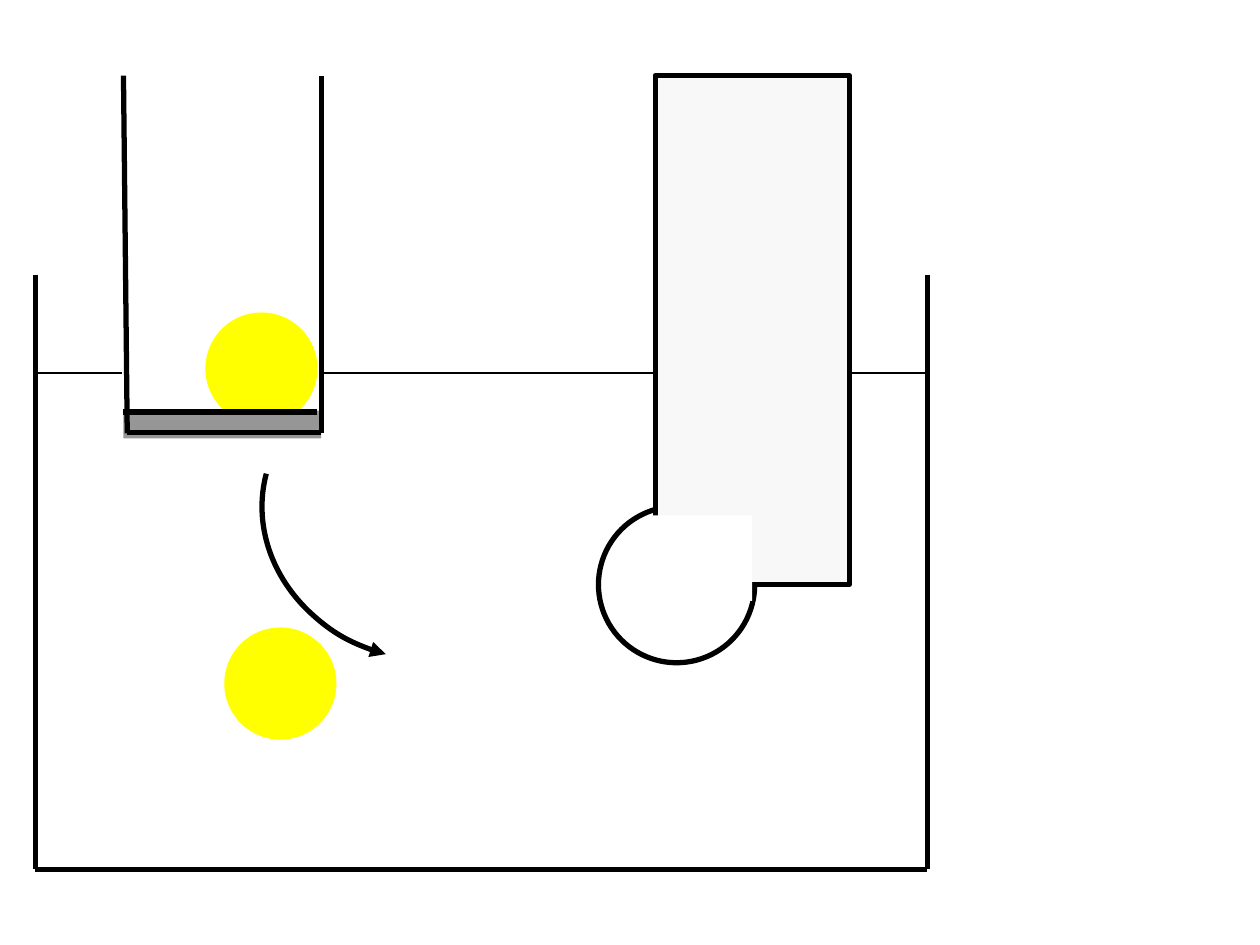
from pptx import Presentation
from pptx.dml.color import RGBColor
from pptx.enum.shapes import MSO_CONNECTOR, MSO_SHAPE
from pptx.oxml.ns import qn
from pptx.util import Inches, Pt
from lxml import etree

COLORS = {
    "ink": "000000",
    "white": "FFFFFF",
    "ball": "FFFF00",
    "base": "969696",
    "column": "F8F8F8",
}
WALL = 3  # points
BALL_SIZE = 0.89


def color(name):
    return RGBColor.from_string(COLORS[name])


def add_part(page, kind, left, top, width, height, fill=None, line=None, weight=WALL):
    part = page.shapes.add_shape(
        kind, Inches(left), Inches(top), Inches(width), Inches(height))
    part.shadow.inherit = False
    if fill:
        part.fill.solid()
        part.fill.fore_color.rgb = color(fill)
    else:
        part.fill.background()
    if line:
        part.line.color.rgb = color(line)
        part.line.width = Pt(weight)
    else:
        part.line.fill.background()
    return part


def add_line(page, x1, y1, x2, y2, weight=WALL):
    line = page.shapes.add_connector(
        MSO_CONNECTOR.STRAIGHT, Inches(x1), Inches(y1), Inches(x2), Inches(y2))
    line.line.color.rgb = color("ink")
    line.line.width = Pt(weight)
    etree.SubElement(line._element.spPr, qn("a:effectLst"))


def add_ball(page, left, top):
    add_part(page, MSO_SHAPE.OVAL, left, top, BALL_SIZE, BALL_SIZE, fill="ball")


def draw_water(page, left, top, width, height):
    level = top + 0.78
    add_line(page, left, level, left + width, level, weight=1.5)


def draw_tube(page, left, top, width, height):
    right, bottom = left + width, top + height
    # Clear the water line inside the tube
    add_part(page, MSO_SHAPE.RECTANGLE, left, top + 2.28, width, 0.24,
             fill="white", line="white", weight=2)
    # Ball resting on the grey base
    add_ball(page, left + 0.65, top + 1.88)
    add_part(page, MSO_SHAPE.RECTANGLE, left, bottom - 0.18, width, 0.22, fill="base")
    # Base edges and walls
    add_line(page, right - 0.03, bottom - 0.17, left, bottom - 0.17)
    add_line(page, right, bottom - 0.01, left + 0.03, bottom - 0.01)
    add_line(page, right, bottom, right, top)
    add_line(page, left + 0.03, bottom, left, top)


def draw_falling_ball(page, left, top, width, height):
    # Curved arrow from the tube into the water
    arrow = add_part(page, MSO_SHAPE.ARC, left + 0.29, top, width, 2.28, line="ink")
    arrow.rotation = 194.9
    outline = arrow._element.spPr.find(qn("a:ln"))
    etree.SubElement(outline, qn("a:headEnd"), type="triangle")
    add_ball(page, left, top + height - BALL_SIZE)


def draw_column(page, left, top, width, height):
    bottom = top + height
    # Round end, covered by the column
    add_part(page, MSO_SHAPE.OVAL, left - 0.45, bottom - 0.62, 1.24, 1.24,
             fill="white", line="ink")
    add_part(page, MSO_SHAPE.RECTANGLE, left, top, width, height,
             fill="column", line="ink")
    # Opening between the column and its round end
    add_part(page, MSO_SHAPE.RECTANGLE, left - 0.02, bottom - 0.55, 0.79, 0.68,
             fill="white")


def draw_tank(page, left, top, width, height):
    right, bottom = left + width, top + height
    for x in (left, right):
        add_line(page, x, top, x, bottom)
    add_line(page, left, bottom, right, bottom)


def main():
    deck = Presentation()
    deck.slide_width, deck.slide_height = Inches(10), Inches(7.5)
    page = deck.slides.add_slide(deck.slide_layouts[6])
    page.background.fill.solid()
    page.background.fill.fore_color.rgb = color("white")

    tank_box = (0.28, 2.18, 7.08, 4.72)
    draw_water(page, *tank_box)
    draw_tube(page, 0.98, 0.6, 1.57, 2.84)
    draw_falling_ball(page, 1.78, 2.95, 2.57, 2.92)
    draw_column(page, 5.2, 0.6, 1.54, 4.04)
    draw_tank(page, *tank_box)
    deck.save("out.pptx")


if __name__ == "__main__":
    main()
